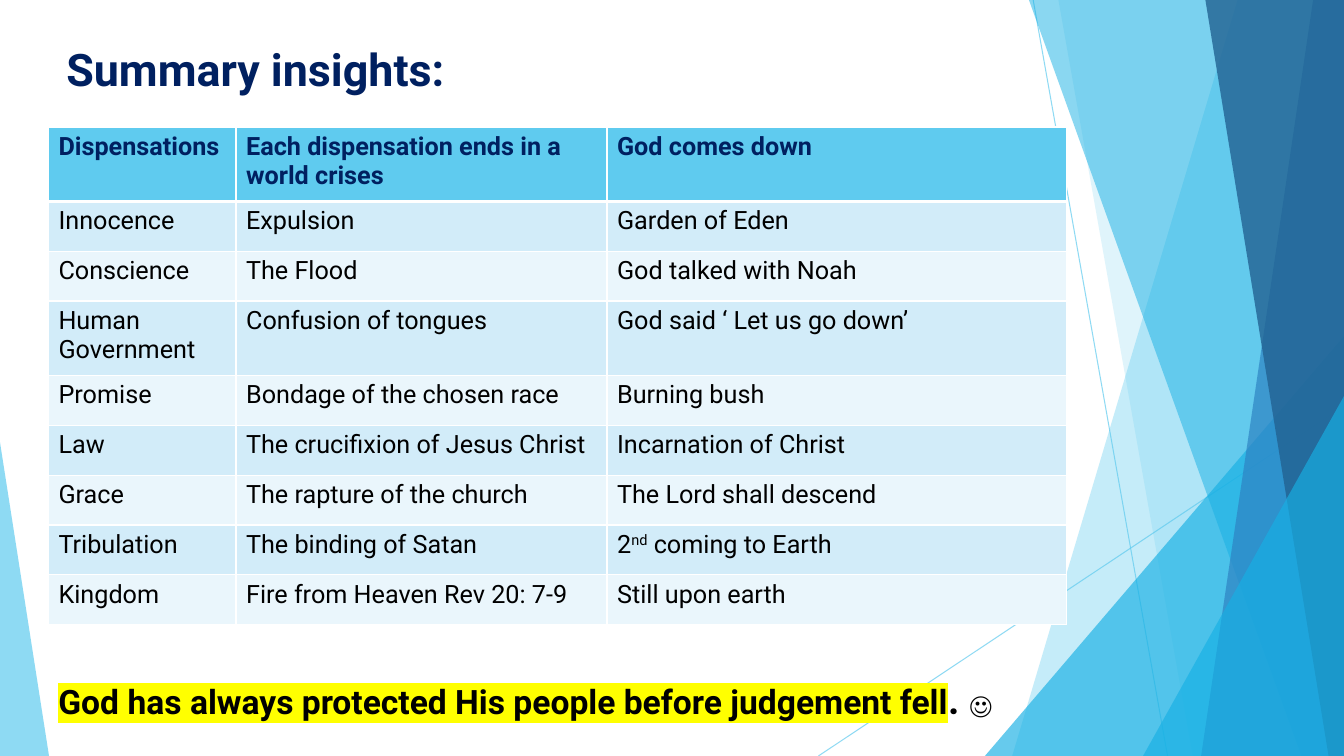
import pptx
import pptx.dml.color
import pptx.enum.shapes
import pptx.enum.text
import pptx.oxml
import pptx.oxml.ns
import pptx.util
from lxml import etree

Pt = pptx.util.Pt
qn = pptx.oxml.ns.qn

WIDTH, HEIGHT = 960, 540
FONT = "Roboto"
COLORS = {
    "sky": "5FCBEF", "cyan": "17B0E4", "blue": "2E83C3", "deep": "226292",
    "navy": "002060", "black": "000000", "white": "FFFFFF", "yellow": "FFFF00",
    "band_dark": "D2ECF9", "band_light": "EAF6FC",
}

THREADS = [((738, 0), (834, HEIGHT)), ((WIDTH, 290), (584.6, HEIGHT))]
# Bands reach the right edge: left end at the top, left end at the bottom.
# Triangles: left, top, width, corner position.
FACETS = [
    ("band", (884, 723), "sky", 36),
    ("band", (756, 852), "sky", 20),
    ("triangle", (703.5, 240, 256.5, 1), "cyan", 66),
    ("band", (735, 929.5), "cyan", 50),
    ("band", (938, 858), "blue", 70),
    ("band", (861, 949), "deep", 80),
    ("triangle", (816.5, 283, 143.5, 1), "cyan", 66),
    ("triangle", (0, 316, 35, 0), "sky", 70),
]

COLUMN_WIDTHS = [134, 265, 328.3]
ROW_HEIGHT, TALL_ROW_HEIGHT = 35.6, 53.2
TALL_ROWS = {0, 3}
# Text between carets is superscript.
ROWS = [
    ("Dispensations", "Each dispensation ends in a world crises", "God comes down"),
    ("Innocence", "Expulsion", "Garden of Eden"),
    ("Conscience", "The Flood", "God talked with Noah"),
    ("Human Government", "Confusion of tongues", "God said ‘ Let us go down’"),
    ("Promise", "Bondage of the chosen race", "Burning bush"),
    ("Law", "The crucifixion of Jesus Christ", "Incarnation of Christ"),
    ("Grace", "The rapture of the church", "The Lord shall descend"),
    ("Tribulation", "The binding of Satan", "2^nd^ coming to Earth"),
    ("Kingdom", "Fire from Heaven Rev 20: 7-9", "Still upon earth"),
]


def rgb(name):
    return pptx.dml.color.RGBColor.from_string(COLORS[name])


def set_alpha(fill_parent, percent):
    """Make the solid colour found under an XML element see-through."""
    color = fill_parent.find(".//" + qn("a:srgbClr"))
    etree.SubElement(color, qn("a:alpha")).set("val", str(percent * 1000))


def set_font(paragraph, size, color, bold):
    font = paragraph.font
    font.name, font.size, font.bold = FONT, Pt(size), bold
    font.color.rgb = rgb(color)


def add_thread(slide, start, end):
    line = slide.shapes.add_connector(
        pptx.enum.shapes.MSO_CONNECTOR.STRAIGHT, *map(Pt, start + end))
    line.line.color.rgb = rgb("sky")
    line.line.width = Pt(0.75)
    properties = line._element.spPr
    set_alpha(properties, 70)
    etree.SubElement(properties, qn("a:effectLst"))


def add_facet(slide, kind, place, color, opacity):
    if kind == "band":
        top_left, bottom_left = place
        builder = slide.shapes.build_freeform(Pt(top_left), 0)
        corners = [(WIDTH, 0), (WIDTH, HEIGHT), (bottom_left, HEIGHT)]
        builder.add_line_segments([(Pt(x), Pt(y)) for x, y in corners], close=True)
        shape = builder.convert_to_shape()
    else:
        left, top, width, corner = place
        shape = slide.shapes.add_shape(
            pptx.enum.shapes.MSO_SHAPE.ISOSCELES_TRIANGLE,
            Pt(left), Pt(top), Pt(width), Pt(HEIGHT - top))
        shape.adjustments[0] = corner
    shape.shadow.inherit = False
    shape.fill.solid()
    shape.fill.fore_color.rgb = rgb(color)
    set_alpha(shape._element.spPr, opacity)
    shape.line.fill.background()


def add_background(slide):
    for start, end in THREADS:
        add_thread(slide, start, end)
    for facet in FACETS:
        add_facet(slide, *facet)


def add_text_box(slide, left, top, width, height):
    frame = slide.shapes.add_textbox(Pt(left), Pt(top), Pt(width), Pt(height)).text_frame
    frame.word_wrap = True
    return frame


def add_title(slide, left, top, width, height):
    frame = add_text_box(slide, left, top, width, height)
    frame.vertical_anchor = pptx.enum.text.MSO_ANCHOR.MIDDLE
    paragraph = frame.paragraphs[0]
    paragraph.add_run().text = "Summary insights:"
    set_font(paragraph, 32, "navy", True)


def set_borders(cell, widths):
    """Draw white borders; widths are for the left, right, top and bottom."""
    properties = cell._tc.get_or_add_tcPr()
    for side, width in zip("LRTB", widths):
        line = etree.SubElement(properties, qn("a:ln" + side), w=str(Pt(width)))
        fill = etree.SubElement(line, qn("a:solidFill"))
        etree.SubElement(fill, qn("a:srgbClr"), val=COLORS["white"])


def fill_cell(cell, text, row_index):
    is_header = row_index == 0
    set_borders(cell, (1, 1, 3 if row_index == 1 else 1, 3 if is_header else 1))
    band = "band_dark" if row_index % 2 else "band_light"
    cell.fill.solid()
    cell.fill.fore_color.rgb = rgb("sky" if is_header else band)
    paragraph = cell.text_frame.paragraphs[0]
    set_font(paragraph, 18, "navy" if is_header else "black", is_header)
    for index, part in enumerate(text.split("^")):
        run = paragraph.add_run()
        run.text = part
        if index % 2:
            run._r.get_or_add_rPr().set("baseline", "30000")


def add_dispensations_table(slide, left, top):
    heights = [TALL_ROW_HEIGHT if i in TALL_ROWS else ROW_HEIGHT for i in range(len(ROWS))]
    table = slide.shapes.add_table(
        len(ROWS), len(COLUMN_WIDTHS), Pt(left), Pt(top),
        Pt(sum(COLUMN_WIDTHS)), Pt(sum(heights))).table
    table.first_row = table.horz_banding = False
    for column, width in zip(table.columns, COLUMN_WIDTHS):
        column.width = Pt(width)
    for row_index, texts in enumerate(ROWS):
        table.rows[row_index].height = Pt(heights[row_index])
        for column_index, text in enumerate(texts):
            fill_cell(table.cell(row_index, column_index), text, row_index)


def add_conclusion(slide, left, top, width, height):
    paragraph = add_text_box(slide, left, top, width, height).paragraphs[0]
    set_font(paragraph, 24, "black", True)
    message = paragraph.add_run()
    message.text = "God has always protected His people before judgement fell"
    highlight = etree.SubElement(message._r.get_or_add_rPr(), qn("a:highlight"))
    etree.SubElement(highlight, qn("a:srgbClr"), val=COLORS["yellow"])
    for text, size in ((". ", 28), ("☺", 18)):
        run = paragraph.add_run()
        run.text = text
        run.font.size = Pt(size)


def main():
    presentation = pptx.Presentation()
    presentation.slide_width, presentation.slide_height = Pt(WIDTH), Pt(HEIGHT)
    slide = presentation.slides.add_slide(presentation.slide_layouts[6])
    add_background(slide)
    add_title(slide, 40.3, 23.8, 690.5, 50.4)
    add_dispensations_table(slide, 34.6, 90.7)
    add_conclusion(slide, 34.6, 478.8, 766.8, 41)
    presentation.save("out.pptx")


if __name__ == "__main__":
    main()
